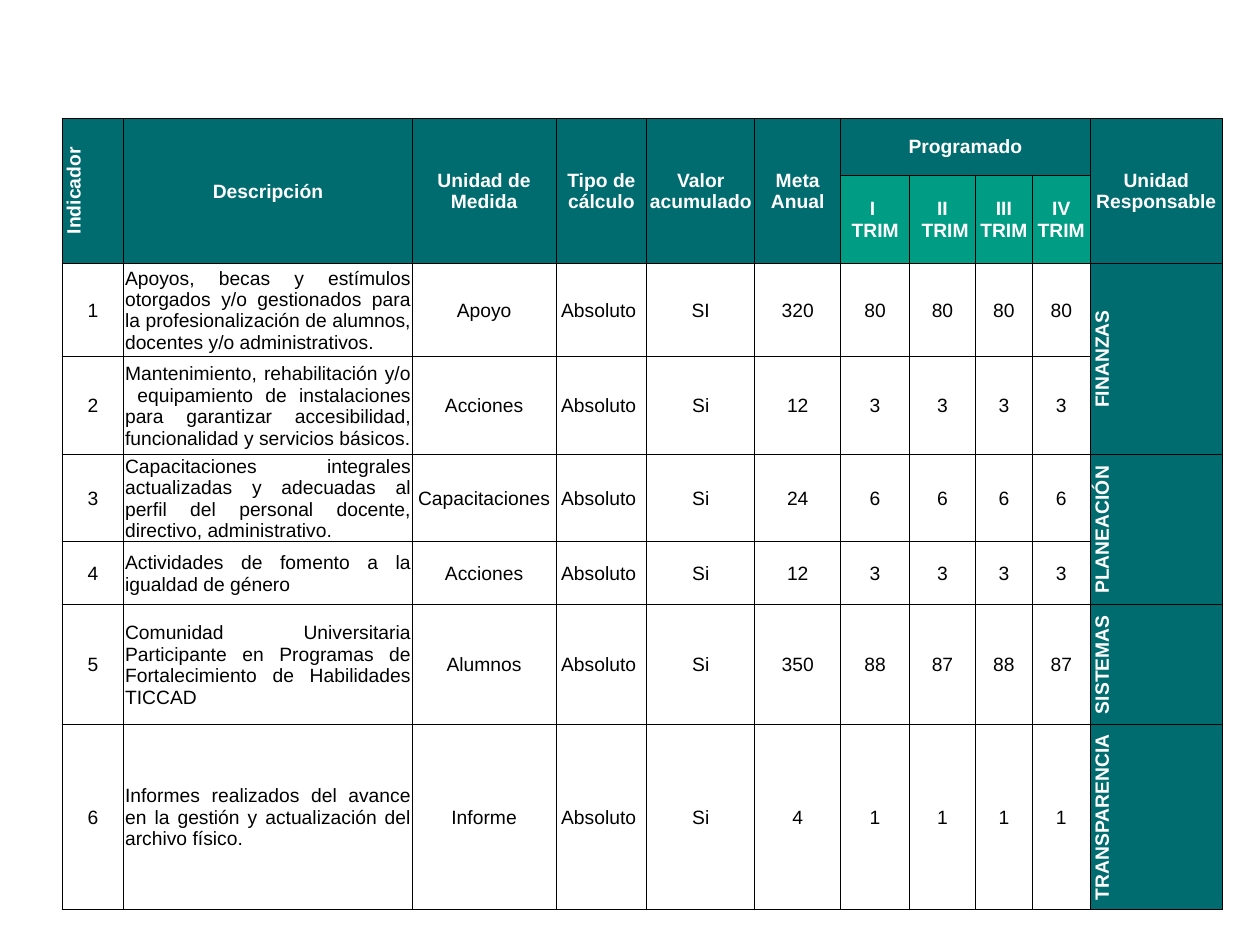
from dataclasses import dataclass

from lxml import etree
from pptx import Presentation
from pptx.dml.color import RGBColor
from pptx.enum.text import MSO_ANCHOR, PP_ALIGN
from pptx.oxml.ns import qn
from pptx.util import Pt

CENTER, JUSTIFY = PP_ALIGN.CENTER, PP_ALIGN.JUSTIFY
MIDDLE = MSO_ANCHOR.MIDDLE


@dataclass(frozen=True)
class Theme:
    font: str = "Arial"
    size: float = 11
    dark: str = "006C6F"
    light: str = "009C84"
    white: str = "FFFFFF"
    black: str = "000000"
    border: float = 0.5


theme = Theme()

COLUMN_WIDTHS = [35.3, 164.8, 82.2, 51.9, 61.7, 49.1, 39.4, 37.6, 32.6, 33, 75.6]
ROW_HEIGHTS = [32.4, 21.6, 53.3, 56.2, 46.1, 36, 68.4, 105.8]
HEADINGS = ["Indicador", "Descripción", "Unidad de Medida", "Tipo de cálculo",
            "Valor acumulado ", "Meta Anual", "Programado"]
QUARTERS = ["I \nTRIM", "II\n TRIM", "III TRIM", "IV TRIM"]
FIRST_QUARTER, UNIT_COLUMN, FIRST_BODY_ROW = 6, 10, 2

# description, unit of measure, accumulated value, yearly goal, goal per quarter
INDICATORS = [
    ("Apoyos, becas y estímulos otorgados y/o gestionados para la "
     "profesionalización de alumnos, docentes y/o administrativos.",
     "Apoyo", "SI", 320, (80, 80, 80, 80)),
    ("Mantenimiento, rehabilitación y/o  equipamiento de instalaciones para "
     "garantizar accesibilidad, funcionalidad y servicios básicos.",
     "Acciones", "Si", 12, (3, 3, 3, 3)),
    ("Capacitaciones integrales actualizadas y adecuadas al perfil del "
     "personal docente, directivo, administrativo.",
     "Capacitaciones", "Si", 24, (6, 6, 6, 6)),
    ("Actividades de fomento a la igualdad de género",
     "Acciones", "Si", 12, (3, 3, 3, 3)),
    ("Comunidad Universitaria Participante en Programas de Fortalecimiento "
     "de Habilidades TICCAD",
     "Alumnos", "Si", 350, (88, 87, 88, 87)),
    ("Informes realizados del avance en la gestión y actualización del "
     "archivo físico.",
     "Informe", "Si", 4, (1, 1, 1, 1)),
]
# responsible unit, number of indicators it covers
UNITS = [("FINANZAS", 2), ("PLANEACIÓN", 2), ("SISTEMAS", 1), ("TRANSPARENCIA", 1)]


def style_cell(cell, fill=None):
    """Set margins, borders and fill; no fill colour leaves the cell clear."""
    cell.vertical_anchor = MIDDLE
    cell.margin_left = cell.margin_right = cell.margin_top = Pt(0.7)
    cell.margin_bottom = Pt(0)
    properties = cell._tc.get_or_add_tcPr()
    for side in ("lnL", "lnR", "lnT", "lnB"):
        line = etree.SubElement(properties, qn(f"a:{side}"), w=str(Pt(theme.border)))
        solid = etree.SubElement(line, qn("a:solidFill"))
        etree.SubElement(solid, qn("a:srgbClr"), val=theme.black)
    if fill:
        cell.fill.solid()
        cell.fill.fore_color.rgb = RGBColor.from_string(fill)
    else:
        cell.fill.background()


def write_cell(cell, text, heading=False, align=CENTER, vertical=False):
    if vertical:
        cell._tc.get_or_add_tcPr().set("vert", "vert270")
    frame = cell.text_frame
    for index, line in enumerate(str(text).split("\n")):
        para = frame.add_paragraph() if index else frame.paragraphs[0]
        para.alignment = align
        span = para.add_run()
        span.text = line
        span.font.name = theme.font
        span.font.size = Pt(theme.size)
        span.font.bold = heading
        color = theme.white if heading else theme.black
        span.font.color.rgb = RGBColor.from_string(color)


deck = Presentation()
deck.slide_width, deck.slide_height = Pt(720), Pt(540)
page = deck.slides.add_slide(deck.slide_layouts[6])

table = page.shapes.add_table(
    len(ROW_HEIGHTS), len(COLUMN_WIDTHS), Pt(35.5), Pt(67.6),
    Pt(sum(COLUMN_WIDTHS)), Pt(sum(ROW_HEIGHTS))).table
table.first_row = table.horz_banding = False
for column, width in zip(table.columns, COLUMN_WIDTHS):
    column.width = Pt(width)
for row, height in zip(table.rows, ROW_HEIGHTS):
    row.height = Pt(height)

for row in range(len(ROW_HEIGHTS)):
    for column in range(len(COLUMN_WIDTHS)):
        fill = None
        if row == 1 and FIRST_QUARTER <= column < UNIT_COLUMN:
            fill = theme.light
        elif row < FIRST_BODY_ROW or column == UNIT_COLUMN:
            fill = theme.dark
        style_cell(table.cell(row, column), fill)

# Two-row headings, with the quarters grouped under the last one
for column, heading in enumerate(HEADINGS):
    write_cell(table.cell(0, column), heading, heading=True, vertical=column == 0)
write_cell(table.cell(0, UNIT_COLUMN), "Unidad Responsable", heading=True)
for column in [*range(FIRST_QUARTER), UNIT_COLUMN]:
    table.cell(0, column).merge(table.cell(1, column))
table.cell(0, FIRST_QUARTER).merge(table.cell(0, UNIT_COLUMN - 1))
for column, quarter in enumerate(QUARTERS, FIRST_QUARTER):
    write_cell(table.cell(1, column), quarter, heading=True)

for number, (description, measure, accumulated, goal, quarters) in enumerate(INDICATORS, 1):
    values = [number, description, measure, "Absoluto ", accumulated, goal, *quarters]
    for column, value in enumerate(values):
        write_cell(table.cell(number + 1, column), value,
                   align=JUSTIFY if column == 1 else CENTER)

row = FIRST_BODY_ROW
for unit, count in UNITS:
    cell = table.cell(row, UNIT_COLUMN)
    write_cell(cell, unit, heading=True, vertical=True)
    if count > 1:
        cell.merge(table.cell(row + count - 1, UNIT_COLUMN))
    row += count

deck.save("out.pptx")
